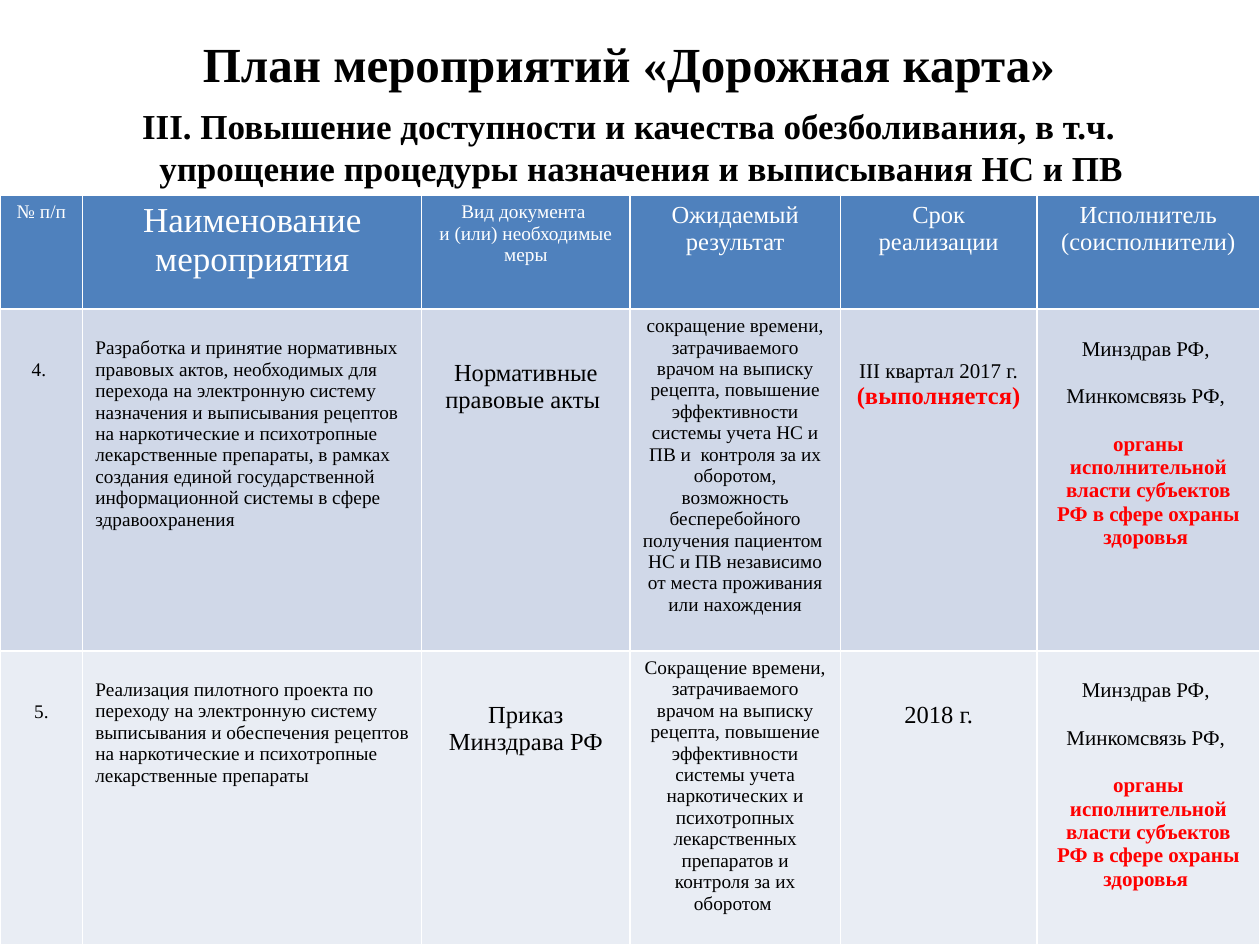
from pptx import Presentation, util as u
from pptx.dml.color import RGBColor
from pptx.enum import text
from pptx.oxml import parse_xml
from pptx.oxml.ns import nsdecls

WHITE, BLACK, RED = "FFFFFF", "000000", "FF0000"
HEADER_FILL, ROW_FILLS = "4F81BD", ("D0D8E8", "E9EDF4")
CENTER, LEFT = text.PP_ALIGN.CENTER, text.PP_ALIGN.LEFT


def rgb(value):
    return RGBColor.from_string(value)


def line(wording, size, color=BLACK, bold=False, align=CENTER, before=0, after=0):
    """Describe one paragraph: its wording, font values and paragraph values."""
    return {
        "wording": wording,
        "color": color,
        "font": {"size": u.Pt(size), "bold": bold},
        "paragraph": {"alignment": align, "space_before": u.Pt(before),
                      "space_after": u.Pt(after)},
    }


class SlideBuilder:
    font_name = "Times New Roman"
    border_width = 1
    cell_margin = 3.6

    def __init__(self, slide):
        self.slide = slide

    def add_lines(self, frame, lines):
        for index, entry in enumerate(lines):
            paragraph = frame.paragraphs[0] if index == 0 else frame.add_paragraph()
            for name, value in entry["paragraph"].items():
                setattr(paragraph, name, value)
            run = paragraph.add_run()
            run.text = entry["wording"]
            for name, value in {"name": self.font_name, **entry["font"]}.items():
                setattr(run.font, name, value)
            run.font.color.rgb = rgb(entry["color"])

    def heading(self, left, top, width, height, lines):
        title = self.slide.shapes.title
        box = {"left": left, "top": top, "width": width, "height": height}
        for name, value in box.items():
            setattr(title, name, u.Pt(value))
        title.fill.solid()
        title.fill.fore_color.rgb = rgb(WHITE)
        frame = title.text_frame
        frame.word_wrap = True
        frame.auto_size = text.MSO_AUTO_SIZE.NONE
        frame.vertical_anchor = text.MSO_ANCHOR.MIDDLE
        self.add_lines(frame, lines)
        for paragraph in frame.paragraphs:
            properties = paragraph._p.get_or_add_pPr()
            properties.set("marL", str(u.Pt(18)))
            properties.set("indent", str(u.Pt(-14.4)))

    def border(self, cell):
        properties = cell._tc.get_or_add_tcPr()
        for position, side in enumerate(("lnL", "lnR", "lnT", "lnB")):
            properties.insert(position, parse_xml(
                f'<a:{side} {nsdecls("a")} w="{u.Pt(self.border_width)}"><a:solidFill>'
                f'<a:srgbClr val="{WHITE}"/></a:solidFill></a:{side}>'))

    def table(self, left, top, widths, heights, fills, rows):
        """Each cell is a pair: the gap above its text and its lines."""
        table = self.slide.shapes.add_table(
            len(heights), len(widths), u.Pt(left), u.Pt(top),
            u.Pt(sum(widths)), u.Pt(sum(heights))).table
        for column, width in zip(table.columns, widths):
            column.width = u.Pt(width)
        for row, height, fill, contents in zip(table.rows, heights, fills, rows):
            row.height = u.Pt(height)
            for cell, (gap, lines) in zip(row.cells, contents):
                cell.fill.solid()
                cell.fill.fore_color.rgb = rgb(fill)
                cell.margin_top = u.Pt(self.cell_margin + gap)
                self.border(cell)
                self.add_lines(cell.text_frame, lines)


def header(size, *wordings):
    return 0, [line(wording, size, WHITE) for wording in wordings]


def measure(number, task, document, result, deadline):
    """Row of the plan; the executors are the same for every measure."""
    one_line, two_lines, between = 12.6, 25.2, 13.8
    executors = [
        line("Минздрав РФ, ", 12),
        line("Минкомсвязь РФ, ", 12, before=between),
        line("органы исполнительной власти субъектов РФ в сфере охраны здоровья ",
             12, RED, True, before=between),
    ]
    return [
        (two_lines, [line(number, 11)]),
        (one_line, [line(task, 11, align=LEFT)]),
        (two_lines, [line(document, 14)]),
        (0, [line(part, 11) for part in result]),
        (two_lines, deadline),
        (one_line, executors),
    ]


def main():
    deck = Presentation()
    deck.slide_width, deck.slide_height = u.Pt(720), u.Pt(540)
    builder = SlideBuilder(deck.slides.add_slide(deck.slide_layouts[5]))

    builder.heading(20.2, 15.1, 674.6, 96.5, [
        line("План мероприятий «Дорожная карта»", 28, bold=True, before=5.6, after=3),
        line("III. Повышение доступности и качества обезболивания, в т.ч. "
             "упрощение процедуры назначения и выписывания НС и ПВ",
             20, bold=True, before=4, after=3),
    ])

    headers = [
        header(11, "№ п/п"),
        header(20, "Наименование мероприятия"),
        header(11, "Вид документа ", "и (или) необходимые меры"),
        header(14, "Ожидаемый результат"),
        header(14, "Срок реализации"),
        header(14, "Исполнитель (соисполнители)"),
    ]
    electronic_system = measure(
        "4. ",
        "Разработка и принятие нормативных правовых актов, необходимых для перехода "
        "на электронную систему назначения и выписывания рецептов на наркотические "
        "и психотропные лекарственные препараты, в рамках создания единой "
        "государственной информационной системы в сфере здравоохранения",
        "Нормативные правовые акты ",
        ["сокращение времени, затрачиваемого врачом на выписку рецепта, повышение "
         "эффективности системы учета НС и ПВ и  контроля за их оборотом, "
         "возможность бесперебойного получения пациентом ",
         "НС и ПВ независимо от места проживания или нахождения"],
        [line("III квартал 2017 г.", 12), line("(выполняется)", 14, RED, True)])
    pilot_project = measure(
        "5.",
        "Реализация пилотного проекта по переходу на электронную систему "
        "выписывания и обеспечения рецептов на наркотические и психотропные "
        "лекарственные препараты",
        "Приказ Минздрава РФ",
        ["Сокращение времени, затрачиваемого врачом на выписку рецепта, повышение "
         "эффективности системы учета наркотических и психотропных лекарственных "
         "препаратов и контроля за их оборотом "],
        [line("2018 г.", 14)])

    builder.table(
        0, 111.5,
        widths=(47.3, 193.7, 119, 120.3, 112.3, 127.4),
        heights=(65.2, 195.2, 168.1),
        fills=(HEADER_FILL, *ROW_FILLS),
        rows=(headers, electronic_system, pilot_project))
    deck.save("out.pptx")


if __name__ == "__main__":
    main()
